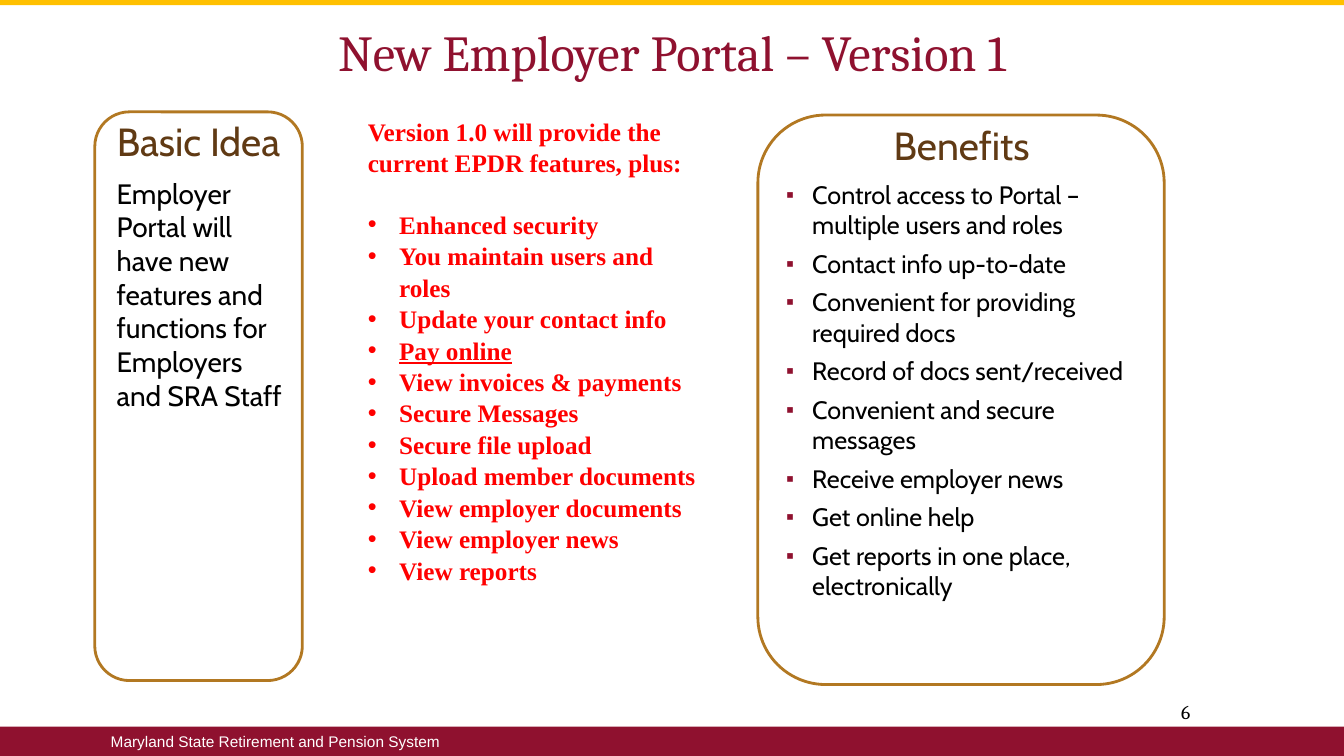
"""Build the slide on version 1 of the employer portal."""
from dataclasses import dataclass

from lxml import etree
from pptx import Presentation
from pptx.dml.color import RGBColor
from pptx.enum.shapes import MSO_SHAPE
from pptx.enum.text import MSO_ANCHOR, MSO_AUTO_SIZE, PP_ALIGN
from pptx.oxml.ns import qn
from pptx.util import Cm, Pt

LEFT, CENTER = PP_ALIGN.LEFT, PP_ALIGN.CENTER
TOP, MIDDLE = MSO_ANCHOR.TOP, MSO_ANCHOR.MIDDLE
RECTANGLE, ROUNDED = MSO_SHAPE.RECTANGLE, MSO_SHAPE.ROUNDED_RECTANGLE
NO_AUTOFIT = MSO_AUTO_SIZE.NONE

TITLE = "New Employer Portal – Version 1"
FOOTER = "Maryland State Retirement and Pension System"
PAGE = "6"
IDEA_HEADING = "Basic Idea"
IDEA = ["Employer Portal will have new features and functions for Employers and SRA Staff"]
FEATURES_INTRO = "Version 1.0 will provide the current EPDR features, plus:"
FEATURES = [
    "Enhanced security",
    "You maintain users and roles",
    "Update your contact info",
    "Pay online",
    "View invoices & payments",
    "Secure Messages",
    "Secure file upload",
    "Upload member documents",
    "View employer documents",
    "View employer news",
    "View reports",
]
UNDERLINED = "Pay online"
BENEFITS_HEADING = "Benefits"
BENEFITS = [
    "Control access to Portal – multiple users and roles",
    "Contact info up-to-date",
    "Convenient for providing required docs",
    "Record of docs sent/received",
    "Convenient and secure messages",
    "Receive employer news",
    "Get online help",
    "Get reports in one place, electronically",
]


@dataclass(frozen=True)
class Style:
    """Font, size and colour of one kind of text."""
    font: str
    size: float
    color: str
    bold: bool = False


class Theme:
    """Colours and type styles of the slide."""
    maroon, gold, bronze = "8F112F", "FFC000", "B27822"
    title = Style("Cambria", 36, maroon)
    heading = Style("Cabin", 28, "603A14")
    idea = Style("Cabin", 20, "000000")
    benefit = Style("Cabin", 18, "000000")
    feature = Style("Times New Roman", 18, "FF0000", True)
    page = Style("Cambria", 14, "000000")
    footer = Style("Arial", 11, "FFFFFF")


WIDTH, HEIGHT = 33.87, 19.05
FOOTER_HEIGHT = 0.74


def place(box):
    return [Cm(value) for value in box]


def add_panel(slide, kind, box, fill=None, line=None):
    panel = slide.shapes.add_shape(kind, *place(box))
    panel.shadow.inherit = False
    if fill:
        panel.fill.solid()
        panel.fill.fore_color.rgb = RGBColor.from_string(fill)
    else:
        panel.fill.background()
    if line:
        panel.line.color.rgb = RGBColor.from_string(line)
        panel.line.width = Pt(2)
    else:
        panel.line.fill.background()
    return panel


def add_bullet(paragraph, symbol, indent, color=None, percent=100):
    properties = paragraph._p.get_or_add_pPr()
    properties.set("marL", str(Cm(indent)))
    properties.set("indent", str(-Cm(indent)))
    if color:
        bullet_color = etree.SubElement(properties, qn("a:buClr"))
        etree.SubElement(bullet_color, qn("a:srgbClr")).set("val", color)
    etree.SubElement(properties, qn("a:buSzPct")).set("val", str(percent * 1000))
    etree.SubElement(properties, qn("a:buFont")).set("typeface", "Arial")
    etree.SubElement(properties, qn("a:buChar")).set("char", symbol)


def write(frame, lines, style, align=LEFT, anchor=TOP, wrap=True):
    frame.auto_size = NO_AUTOFIT
    frame.word_wrap = wrap
    frame.vertical_anchor = anchor
    for index, line in enumerate(lines):
        paragraph = frame.add_paragraph() if index else frame.paragraphs[0]
        paragraph.alignment = align
        run = paragraph.add_run()
        run.text = line
        run.font.name = style.font
        run.font.size = Pt(style.size)
        run.font.bold = style.bold
        run.font.color.rgb = RGBColor.from_string(style.color)
    return frame.paragraphs


def add_text(slide, box, lines, style, **layout):
    frame = slide.shapes.add_textbox(*place(box)).text_frame
    return write(frame, lines, style, **layout)


def add_frame(slide):
    footer_box = (0, HEIGHT - FOOTER_HEIGHT, WIDTH, FOOTER_HEIGHT)
    footer = add_panel(slide, RECTANGLE, footer_box, fill=Theme.maroon)
    footer.text_frame.margin_left = Cm(2.79)
    footer.text_frame.margin_top = footer.text_frame.margin_bottom = 0
    write(footer.text_frame, [FOOTER], Theme.footer, anchor=MIDDLE)
    add_panel(slide, RECTANGLE, (0, 0, WIDTH, 0.13), fill=Theme.gold)
    title = slide.shapes.title
    title.left, title.top, title.width, title.height = place((0, 0.13, WIDTH, 2.34))
    write(title.text_frame, [TITLE], Theme.title, align=CENTER, anchor=MIDDLE)
    add_text(slide, (28.47, 17.6, 2.82, 0.69), [PAGE], Theme.page,
             align=CENTER, anchor=MIDDLE)


def add_idea(slide):
    add_panel(slide, ROUNDED, (2.39, 2.82, 5.23, 14.33), line=Theme.bronze)
    add_text(slide, (2.51, 2.82, 4.98, 1.45), [IDEA_HEADING], Theme.heading,
             align=CENTER, wrap=False)
    add_text(slide, (2.69, 4.32, 4.95, 6.25), IDEA, Theme.idea)


def add_benefits(slide):
    add_panel(slide, ROUNDED, (19.1, 2.9, 10.24, 14.35), line=Theme.bronze)
    add_text(slide, (22.15, 2.92, 4.17, 1.45), [BENEFITS_HEADING], Theme.heading,
             align=CENTER, wrap=False)
    benefits = add_text(slide, (19.56, 4.39, 9.32, 11.76), BENEFITS, Theme.benefit)
    for index, benefit in enumerate(benefits):
        add_bullet(benefit, "▪", 0.66, Theme.maroon, 90)
        if index:
            benefit.space_before = Pt(6)


def add_features(slide):
    intro, *features = add_text(slide, (9.02, 2.77, 8.86, 12.57),
                                [FEATURES_INTRO, *FEATURES], Theme.feature)
    intro.line_spacing = 1.04
    for feature in features:
        add_bullet(feature, "•", 0.79)
        feature.line_spacing = 1.04
        if feature.text == UNDERLINED:
            feature.runs[0].font.underline = True
    features[0].space_before = Pt(21.6)


def main():
    deck = Presentation()
    deck.slide_width, deck.slide_height = Cm(WIDTH), Cm(HEIGHT)
    slide = deck.slides.add_slide(deck.slide_layouts[5])
    add_frame(slide)
    add_idea(slide)
    add_benefits(slide)
    add_features(slide)
    deck.save("out.pptx")


if __name__ == "__main__":
    main()
